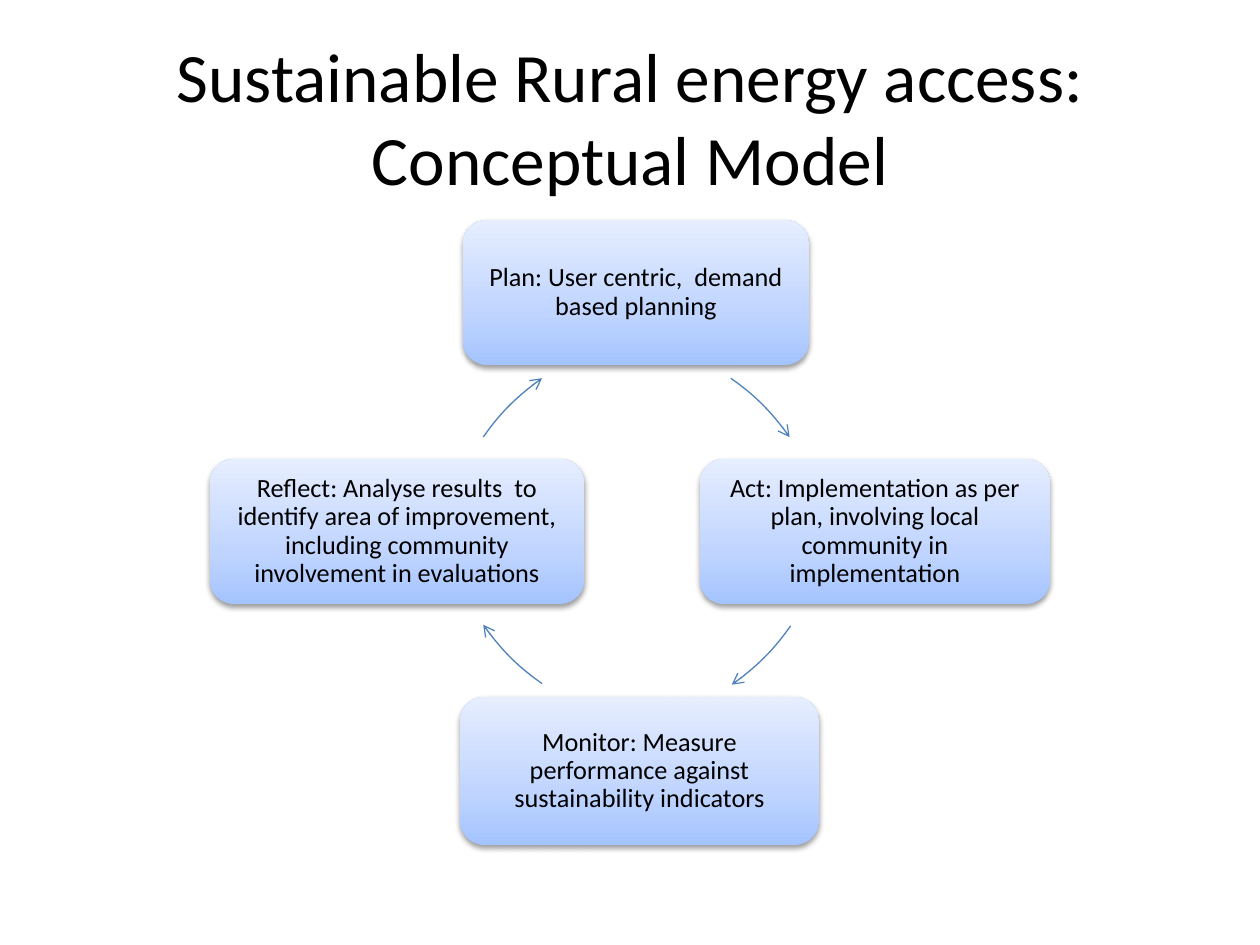
from lxml.etree import SubElement
from pptx import Presentation
from pptx.dml.color import RGBColor
from pptx.enum.shapes import MSO_SHAPE as Shape
from pptx.enum.text import MSO_ANCHOR as Anchor, MSO_AUTO_SIZE as AutoSize, PP_ALIGN as Align
from pptx.oxml import parse_xml
from pptx.oxml.ns import nsdecls, qn
from pptx.util import Pt

EMU_PER_PX = 914400 / 126


def px(length):
    return round(length * EMU_PER_PX)


def color(hex_string):
    return RGBColor.from_string(hex_string)


class CycleSlide:
    """Style and drawing methods for the current slide."""
    font = "Calibri"
    ink = "000000"
    arrow_color = "4F81BD"
    gradient = ((0, "A4C4FF"), (35, "BFD4FF"), (100, "E6EEFF"))

    def __init__(self, deck):
        self.slide = deck.slides.add_slide(deck.slide_layouts[5])

    def set_text(self, frame, text, size, line_spacing):
        frame.word_wrap = True
        frame.auto_size = AutoSize.NONE
        frame.vertical_anchor = Anchor.MIDDLE
        para = frame.paragraphs[0]
        para.text = text
        para.alignment = Align.CENTER
        para.line_spacing = line_spacing
        para.font.name = self.font
        para.font.size = Pt(size)
        para.font.color.rgb = color(self.ink)

    def title(self, text, left, top, width, height):
        title = self.slide.shapes.title
        title.left, title.top, title.width, title.height = map(px, (left, top, width, height))
        self.set_text(title.text_frame, text, 39.6, 1.0)

    def add(self, kind, left, top, width, height):
        shape = self.slide.shapes.add_shape(kind, *map(px, (left, top, width, height)))
        shape.shadow.inherit = False
        return shape

    def step(self, text, left, top, width, height):
        box = self.add(Shape.ROUNDED_RECTANGLE, left, top, width, height)
        box.line.fill.background()
        self.shade(box)
        frame = box.text_frame
        frame.margin_left = frame.margin_right = px(15)
        frame.margin_top = frame.margin_bottom = px(15)
        self.set_text(frame, text, 15, 0.9)

    def shade(self, box):
        # Upward three-stop gradient
        properties = box.element.spPr
        stops = "".join(
            f'<a:gs pos="{percent * 1000}"><a:srgbClr val="{tint}"/></a:gs>'
            for percent, tint in self.gradient)
        properties.find(qn("a:prstGeom")).addnext(parse_xml(
            f'<a:gradFill {nsdecls("a")} rotWithShape="1"><a:gsLst>{stops}</a:gsLst>'
            '<a:lin ang="16200000" scaled="0"/></a:gradFill>'))
        # Soft shadow below the box
        properties.find(qn("a:effectLst")).append(parse_xml(
            f'<a:outerShdw {nsdecls("a")} blurRad="{Pt(3.1)}" dist="{Pt(1.6)}" dir="5400000" '
            'rotWithShape="0"><a:srgbClr val="000000"><a:alpha val="38000"/></a:srgbClr>'
            '</a:outerShdw>'))

    def arc_arrow(self, left, top, diameter, start, sweep):
        arc = self.add(Shape.ARC, left, top, diameter, diameter)
        # Adjustments count 60000ths of a degree, scaled by 100000
        arc.adjustments[0] = start * 0.6
        arc.adjustments[1] = (start + sweep) * 0.6
        arc.fill.background()
        arc.line.color.rgb = color(self.arrow_color)
        arc.line.width = Pt(0.75)
        SubElement(arc.element.spPr.find(qn("a:ln")), qn("a:tailEnd"), type="arrow")


def main():
    deck = Presentation()
    deck.slide_width, deck.slide_height = px(1260), px(945)
    page = CycleSlide(deck)
    page.title("Sustainable Rural energy access: Conceptual Model", 63, 38, 1134, 157)

    # Steps, clockwise from the top
    steps = (
        ("Plan: User centric,  demand based planning", 463, 220, 346, 145),
        ("Act: Implementation as per plan, involving local community in implementation",
         700, 459, 350, 145),
        ("Monitor: Measure performance against sustainability indicators",
         460, 697, 359, 148),
        ("Reflect: Analyse results  to identify area of improvement, "
         "including community involvement in evaluations", 210, 459, 374, 145),
    )
    # Corner of the circle that carries the arrow after each step
    circles = ((354, 335), (355, 249), (440, 248), (440, 335))
    for index, (step, (left, top)) in enumerate(zip(steps, circles)):
        page.step(*step)
        page.arc_arrow(left, top, 479, start=(305 + 90 * index) % 360, sweep=20)

    deck.save("out.pptx")


if __name__ == "__main__":
    main()
